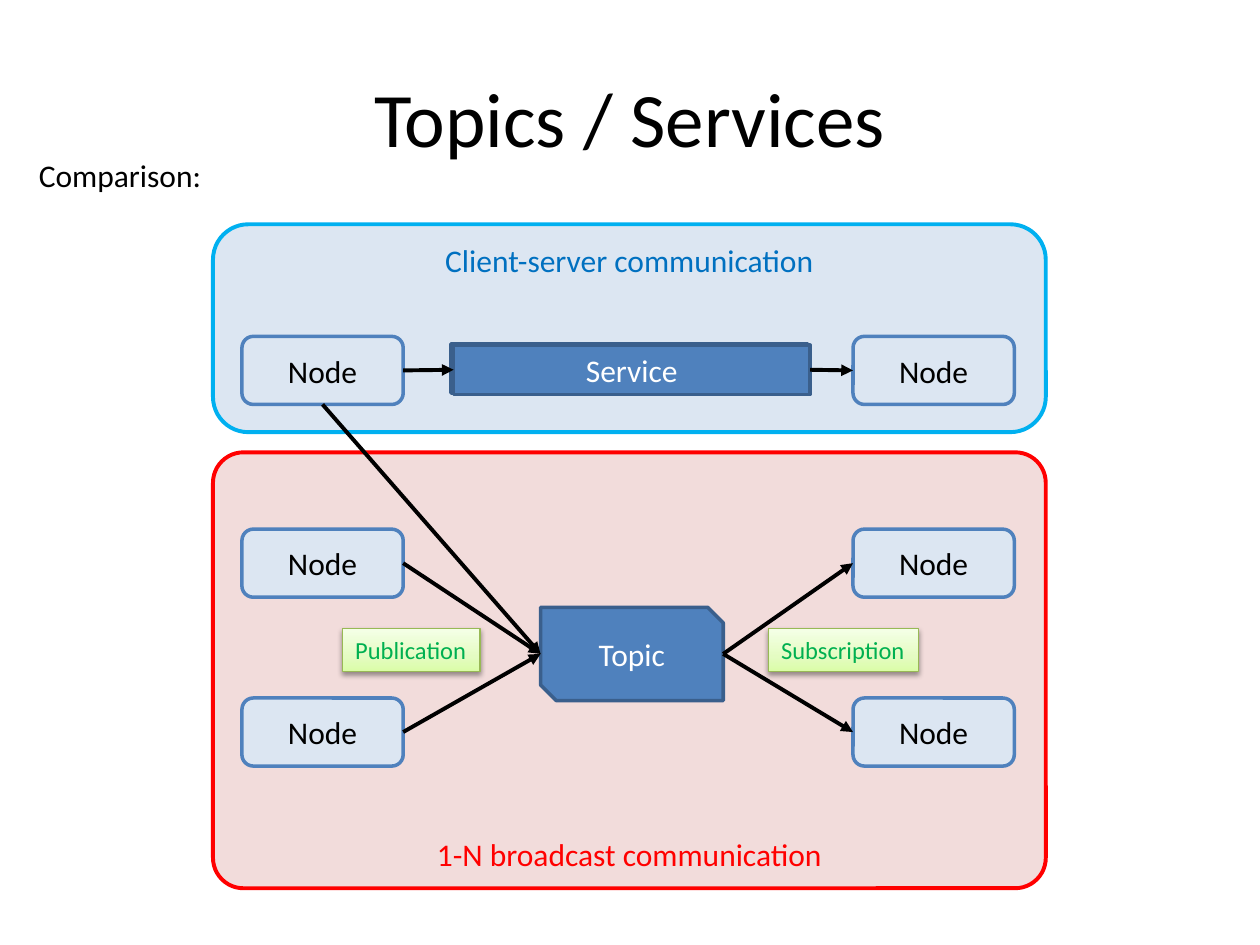
from lxml import etree
from pptx import Presentation
from pptx.dml.color import RGBColor
from pptx.enum.shapes import MSO_CONNECTOR, MSO_SHAPE
from pptx.enum.text import MSO_ANCHOR, MSO_AUTO_SIZE, PP_ALIGN
from pptx.oxml.ns import qn
from pptx.util import Inches, Pt

FONT = "Calibri"
LEFT, CENTER = PP_ALIGN.LEFT, PP_ALIGN.CENTER
TOP, MIDDLE, BOTTOM = MSO_ANCHOR.TOP, MSO_ANCHOR.MIDDLE, MSO_ANCHOR.BOTTOM
RECTANGLE, ROUNDED = MSO_SHAPE.RECTANGLE, MSO_SHAPE.ROUNDED_RECTANGLE
SNIPPED = MSO_SHAPE.SNIP_2_DIAG_RECTANGLE
STRAIGHT = MSO_CONNECTOR.STRAIGHT
FIT_SHAPE = MSO_AUTO_SIZE.SHAPE_TO_FIT_TEXT

BLACK, WHITE, GREEN = "000000", "FFFFFF", "00B050"
BLUE, DARK_BLUE, PALE_BLUE = "4F81BD", "3A5F8C", "DCE6F2"
LABEL_STOPS = ((0, "DAFDA7"), (35, "E4FCC2"), (100, "F5FFE7"))
NODE_WIDTH, NODE_HEIGHT = 1.28, 0.54
LEFT_NODES, RIGHT_NODES = 1.92, 6.77


def color(value):
    """Turn a hex string into a colour."""
    return RGBColor.from_string(value)


def write_text(shape, text, size, text_color, align=CENTER, anchor=MIDDLE, wrap=False):
    """Put one line of text into a shape."""
    frame = shape.text_frame
    frame.word_wrap = wrap
    frame.vertical_anchor = anchor
    paragraph = frame.paragraphs[0]
    paragraph.alignment = align
    run = paragraph.add_run()
    run.text = text
    run.font.name = FONT
    run.font.size = Pt(size)
    run.font.color.rgb = color(text_color)


def add_text(slide, box, text, size, align=LEFT, anchor=TOP, wrap=False):
    """Add a black text box."""
    shape = slide.shapes.add_textbox(*map(Inches, box))
    write_text(shape, text, size, BLACK, align, anchor, wrap)
    return shape


def add_box(slide, kind, box, fill, line, width=2):
    """Add a filled and outlined shape without a shadow."""
    shape = slide.shapes.add_shape(kind, *map(Inches, box))
    shape.shadow.inherit = False
    shape.fill.solid()
    shape.fill.fore_color.rgb = color(fill)
    shape.line.color.rgb = color(line)
    shape.line.width = Pt(width)
    return shape


def add_panel(slide, box, fill, accent, text, text_color, anchor, corner):
    """Add a large rounded panel with its heading."""
    panel = add_box(slide, ROUNDED, box, fill, accent, 2.25)
    panel.adjustments[0] = corner
    write_text(panel, text, 18, text_color, anchor=anchor)


def add_node(slide, left, top):
    """Add a rounded node box."""
    box = (left, top, NODE_WIDTH, NODE_HEIGHT)
    node = add_box(slide, ROUNDED, box, PALE_BLUE, BLUE)
    write_text(node, "Node", 18, BLACK)
    return node


def add_channel(slide, kind, box, text):
    """Add a solid blue service or topic shape."""
    channel = add_box(slide, kind, box, BLUE, DARK_BLUE)
    write_text(channel, text, 18, WHITE, wrap=True)
    return channel


def add_color_element(parent, value):
    """Append a hex colour element."""
    return etree.SubElement(parent, qn("a:srgbClr"), val=value)


def add_label(slide, left, width, text):
    """Add a green gradient label with a soft shadow."""
    label = add_box(slide, RECTANGLE, (left, 4.99, width, 0.34), WHITE, "98B955", 0.75)
    label.fill.gradient()
    label.fill.gradient_angle = 90
    properties = label._element.spPr
    stops = properties.find(qn("a:gradFill")).find(qn("a:gsLst"))
    for stop in list(stops):
        stops.remove(stop)
    for position, value in LABEL_STOPS:
        stop = etree.SubElement(stops, qn("a:gs"), pos=str(position * 1000))
        add_color_element(stop, value)
    shadow = etree.SubElement(
        properties.find(qn("a:effectLst")), qn("a:outerShdw"),
        blurRad=str(Pt(3.1)), dist=str(Pt(1.6)), dir="5400000", rotWithShape="0")
    etree.SubElement(add_color_element(shadow, BLACK), qn("a:alpha"), val="38000")
    write_text(label, text, 14, GREEN, LEFT, TOP)
    label.text_frame.auto_size = FIT_SHAPE


def left_of(shape):
    """Give the middle of the left side."""
    return shape.left, shape.top + shape.height // 2


def right_of(shape):
    """Give the middle of the right side."""
    return shape.left + shape.width, shape.top + shape.height // 2


def bottom_of(shape):
    """Give the middle of the bottom side."""
    return shape.left + shape.width // 2, shape.top + shape.height


def add_arrow(slide, start, end):
    """Add a black arrow between two points."""
    arrow = slide.shapes.add_connector(STRAIGHT, *start, *end)
    arrow.line.color.rgb = color(BLACK)
    arrow.line.width = Pt(2.25)
    etree.SubElement(arrow.line._get_or_add_ln(), qn("a:tailEnd"), type="triangle")
    etree.SubElement(arrow._element.spPr, qn("a:effectLst"))


def main():
    """Build the slide and save it."""
    presentation = Presentation()
    presentation.slide_width, presentation.slide_height = Inches(10), Inches(7.5)
    slide = presentation.slides.add_slide(presentation.slide_layouts[6])

    add_panel(slide, (1.69, 1.78, 6.61, 1.65), PALE_BLUE, "00B0F0",
              "Client-server communication", "0070C0", TOP, 0.17)
    add_panel(slide, (1.69, 3.59, 6.61, 3.46), "F2DCDB", "FF0000",
              "1-N broadcast communication", "FF0000", BOTTOM, 0.07)
    add_text(slide, (0.5, 0.3, 9, 1.25), "Topics / Services", 44, CENTER, MIDDLE, True)

    add_box(slide, RECTANGLE, (3.58, 2.73, 2.83, 0.39), BLUE, DARK_BLUE)
    client, server = [add_node(slide, left, 2.67) for left in (LEFT_NODES, RIGHT_NODES)]
    service = add_channel(slide, RECTANGLE, (3.6, 2.74, 2.83, 0.39), "Service")
    publishers, subscribers = [
        [add_node(slide, left, top) for top in (4.2, 5.54)]
        for left in (LEFT_NODES, RIGHT_NODES)]
    topic = add_channel(slide, SNIPPED, (4.29, 4.82, 1.45, 0.74), "Topic")
    add_label(slide, 2.72, 1.09, "Publication")
    add_label(slide, 6.1, 1.19, "Subscription")

    for publisher in publishers:
        add_arrow(slide, right_of(publisher), left_of(topic))
    add_arrow(slide, bottom_of(client), left_of(topic))
    for subscriber in subscribers:
        add_arrow(slide, right_of(topic), left_of(subscriber))
    add_arrow(slide, right_of(service), left_of(server))
    add_arrow(slide, right_of(client), left_of(service))

    comparison = add_text(slide, (0.21, 1.19, 1.5, 0.4), "Comparison:", 18)
    comparison.text_frame.auto_size = FIT_SHAPE
    presentation.save("out.pptx")


if __name__ == "__main__":
    main()
